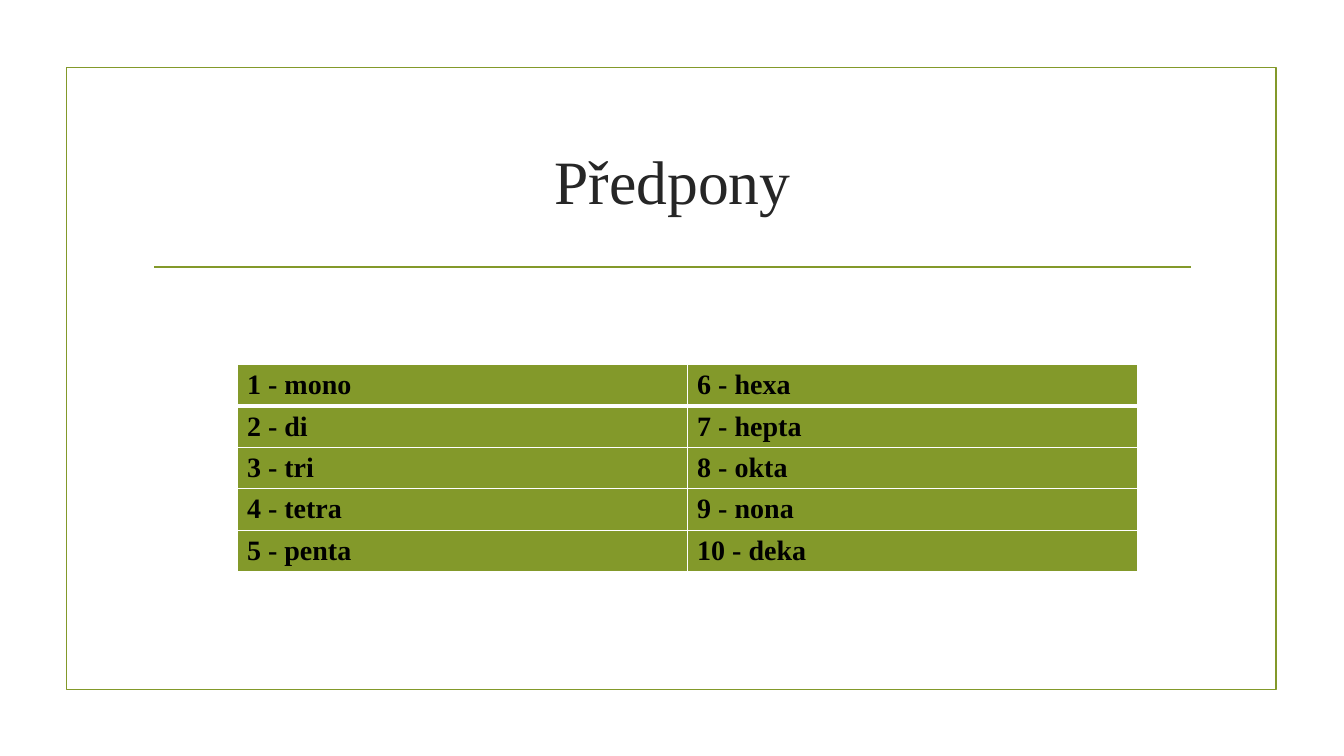
from dataclasses import dataclass

from lxml.etree import SubElement
from pptx import Presentation
from pptx.dml.color import RGBColor
from pptx.enum.shapes import MSO_CONNECTOR as Connector, MSO_SHAPE as Shape
from pptx.enum.text import MSO_ANCHOR as Anchor, PP_ALIGN as Align
from pptx.oxml.ns import qn
from pptx.util import Inches, Pt

COLORS = {"olive": "83992A", "title": "262626", "text": "000000", "grid": "FFFFFF"}
FONT = "Times New Roman"
LINE_WIDTH = Pt(1.25)


@dataclass
class PrefixRow:
    left: str
    right: str


PREFIXES = [
    PrefixRow("1 - mono", "6 - hexa"),
    PrefixRow("2 - di", "7 - hepta"),
    PrefixRow("3 - tri", "8 - okta"),
    PrefixRow("4 - tetra", "9 - nona"),
    PrefixRow("5 - penta", "10 - deka"),
]


def color(name: str) -> RGBColor:
    return RGBColor.from_string(COLORS[name])


def write_text(frame, text: str, *, size: float, ink: str,
               bold: bool = False, align=Align.LEFT) -> None:
    para = frame.paragraphs[0]
    para.alignment = align
    span = para.add_run()
    span.text = text
    span.font.name = FONT
    span.font.size = Pt(size)
    span.font.bold = bold
    span.font.color.rgb = color(ink)


def style_line(line) -> None:
    line.color.rgb = color("olive")
    line.width = LINE_WIDTH


def add_border(cell, side: str, points: float) -> None:
    properties = cell._tc.get_or_add_tcPr()
    border = SubElement(properties, qn(f"a:ln{side}"), w=str(Pt(points)))
    fill = SubElement(border, qn("a:solidFill"))
    SubElement(fill, qn("a:srgbClr"), val=COLORS["grid"])


def style_cell(cell, text: str, top: float, bottom: float) -> None:
    for side, points in (("L", 1), ("R", 1), ("T", top), ("B", bottom)):
        add_border(cell, side, points)
    cell.fill.solid()
    cell.fill.fore_color.rgb = color("olive")
    write_text(cell.text_frame, text, size=20, ink="text", bold=True)


def add_frame(page) -> None:
    box = page.shapes.add_shape(Shape.RECTANGLE, Inches(0.66), Inches(0.67),
                                Inches(12), Inches(6.17))
    box.shadow.inherit = False
    box.fill.background()
    style_line(box.line)

    rule = page.shapes.add_connector(Connector.STRAIGHT, Inches(1.53), Inches(2.65),
                                     Inches(11.81), Inches(2.65))
    style_line(rule.line)
    SubElement(rule._element.spPr, qn("a:effectLst"))


def add_title(page, text: str) -> None:
    title = page.shapes.title
    title.left, title.top = Inches(1.42), Inches(1.07)
    title.width, title.height = Inches(10.5), Inches(1.43)
    title.text_frame.vertical_anchor = Anchor.MIDDLE
    write_text(title.text_frame, text, size=44, ink="title", align=Align.CENTER)


def add_prefix_table(page, prefixes: list[PrefixRow]) -> None:
    row_height = Inches(0.41)
    table = page.shapes.add_table(len(prefixes), 2, Inches(2.35), Inches(3.62),
                                  Inches(8.93), row_height * len(prefixes)).table
    for index, prefix in enumerate(prefixes):
        table.rows[index].height = row_height
        # A thick rule separates the first row from the rest
        top = 3 if index == 1 else 1
        bottom = 3 if index == 0 else 1
        for column, text in enumerate((prefix.left, prefix.right)):
            style_cell(table.cell(index, column), text, top, bottom)


def main() -> None:
    deck = Presentation()
    deck.slide_width, deck.slide_height = Inches(13.33), Inches(7.5)
    page = deck.slides.add_slide(deck.slide_layouts[5])

    # Frame and title rule
    add_frame(page)
    # Heading
    add_title(page, "Předpony")
    # Numeral prefixes
    add_prefix_table(page, PREFIXES)

    deck.save("out.pptx")


if __name__ == "__main__":
    main()
